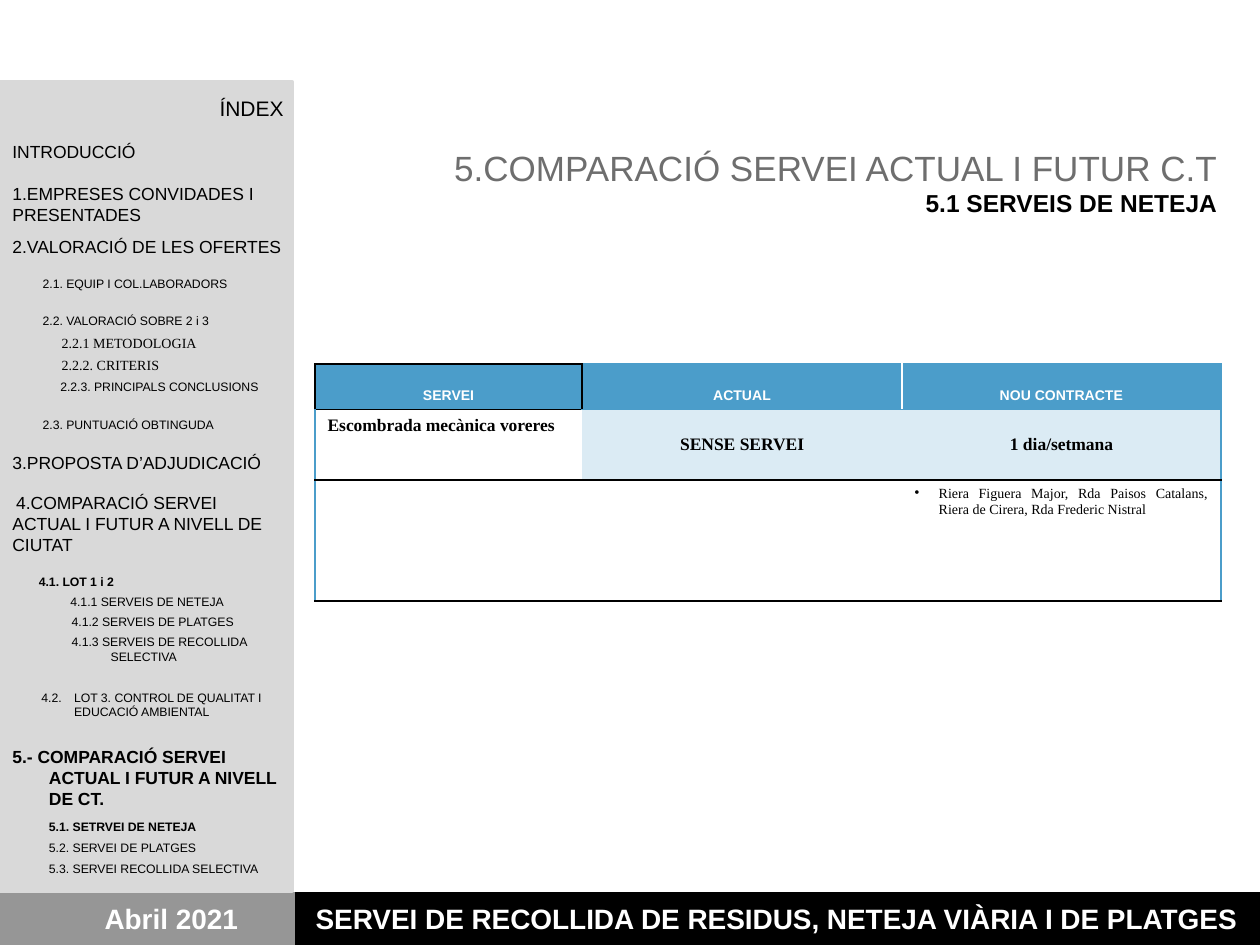
from typing import NamedTuple, Optional

from lxml.etree import SubElement
from pptx import Presentation
from pptx.dml.color import RGBColor
from pptx.enum.shapes import MSO_SHAPE
from pptx.enum.text import MSO_ANCHOR, PP_ALIGN
from pptx.oxml import parse_xml
from pptx.oxml.ns import nsdecls, qn
from pptx.util import Inches, Pt

ARIAL, TIMES = "Arial", "Times New Roman"
BLACK, WHITE, BLUE, PALE_BLUE = "000000", "FFFFFF", "4B9DCA", "DBEBF4"
SIDEBAR_GREY, FOOTER_GREY, TITLE_GREY = "D9D9D9", "969696", "6E6E6E"


class Entry(NamedTuple):
    """Index line: left and hang in inches, before and size in points."""
    text: str
    before: float
    size: float = 7
    left: float = 0
    hang: float = 0
    bold: bool = False
    font: str = ARIAL
    align: PP_ALIGN = PP_ALIGN.LEFT


class Cell(NamedTuple):
    """Table cell: edges maps L, R, T and B to a border colour."""
    edges: dict
    text: str = ""
    fill: Optional[str] = None
    font: str = TIMES
    size: float = 10
    color: str = BLACK
    bold: bool = True
    align: PP_ALIGN = PP_ALIGN.CENTER
    anchor: MSO_ANCHOR = MSO_ANCHOR.MIDDLE
    bullet: bool = False


INDEX = [
    Entry("ÍNDEX", 0, 12, align=PP_ALIGN.RIGHT),
    Entry("INTRODUCCIÓ", 11.4, 10),
    Entry("1.EMPRESES CONVIDADES I PRESENTADES", 12.3, 10),
    Entry("2.VALORACIÓ DE LES OFERTES", 6, 10),
    Entry("2.1. EQUIP I COL.LABORADORS", 11, left=0.24),
    Entry("2.2. VALORACIÓ SOBRE 2 i 3", 13, left=0.24),
    Entry("2.2.1 METODOLOGIA", 3.4, 8, left=0.39, font=TIMES),
    Entry("2.2.2. CRITERIS", 3.4, 8, left=0.39, font=TIMES),
    Entry("2.2.3. PRINCIPALS CONCLUSIONS", 3.2, left=0.38),
    Entry("2.3. PUNTUACIÓ OBTINGUDA", 13, left=0.24),
    Entry("3.PROPOSTA D’ADJUDICACIÓ", 12, 10),
    Entry("4.COMPARACIÓ SERVEI ACTUAL I FUTUR A NIVELL DE CIUTAT", 10.3, 10, hang=-0.03),
    Entry("4.1. LOT 1 i 2", 11, left=0.21, bold=True),
    Entry("4.1.1 SERVEIS DE NETEJA", 3.2, left=0.46),
    Entry("4.1.2 SERVEIS DE PLATGES", 3.2, left=0.47),
    Entry("4.1.3 SERVEIS DE RECOLLIDA SELECTIVA", 3, left=0.78, hang=0.31),
    Entry("4.2.\tLOT 3. CONTROL DE QUALITAT I EDUCACIÓ AMBIENTAL", 15, left=0.49, hang=0.26),
    Entry("5.- COMPARACIÓ SERVEI ACTUAL I FUTUR A NIVELL DE CT.", 15, 10,
          left=0.29, hang=0.29, bold=True),
    Entry("5.1. SETRVEI DE NETEJA", 6.2, left=0.29, bold=True),
    Entry("5.2. SERVEI DE PLATGES", 3.6, left=0.29),
    Entry("5.3. SERVEI RECOLLIDA SELECTIVA", 3.6, left=0.29),
]

HEADER = dict(fill=BLUE, font=ARIAL, size=8, color=WHITE, anchor=MSO_ANCHOR.BOTTOM)
RULED = {"T": BLACK, "B": BLACK}
ROWS = [
    [
        Cell(dict.fromkeys("LRTB", BLACK), "SERVEI", **HEADER),
        Cell({"L": BLACK, "R": WHITE, "T": BLUE, "B": BLUE}, "ACTUAL", **HEADER),
        Cell({"L": WHITE, "R": BLUE, "T": BLUE, "B": BLUE}, "NOU CONTRACTE", **HEADER),
    ],
    [
        Cell({"L": BLUE, **RULED}, "Escombrada mecànica voreres",
             align=PP_ALIGN.LEFT, anchor=MSO_ANCHOR.TOP),
        Cell({"T": BLUE, "B": BLACK}, "SENSE SERVEI", PALE_BLUE),
        Cell({"T": BLUE, "R": BLUE, "B": BLACK}, "1 dia/setmana", PALE_BLUE),
    ],
    [
        Cell({"L": BLUE, **RULED}),
        Cell(RULED),
        Cell({"R": BLUE, **RULED},
             "Riera Figuera Major, Rda Paisos Catalans, Riera de Cirera, Rda Frederic Nistral",
             size=8, bold=False, align=PP_ALIGN.JUSTIFY, anchor=MSO_ANCHOR.TOP, bullet=True),
    ],
]


def rgb(value: str) -> RGBColor:
    return RGBColor.from_string(value)


def write(frame, text: str, *, size: float, font: str = ARIAL, color: str = BLACK,
          bold: bool = False, align=PP_ALIGN.LEFT, before: float = 0,
          left: float = 0, hang: float = 0, bullet: bool = False) -> None:
    """Fill the empty first paragraph of a frame, or add one after it."""
    para = frame.paragraphs[-1]
    if para.runs:
        para = frame.add_paragraph()
    properties = para._p.get_or_add_pPr()
    properties.set("marL", str(Inches(left)))
    properties.set("indent", str(-Inches(hang)))
    if bullet:
        SubElement(properties, qn("a:buChar")).set("char", "•")
    para.alignment = align
    para.space_before = Pt(before)
    span = para.add_run()
    span.text = text
    span.font.name, span.font.size, span.font.bold = font, Pt(size), bold
    span.font.color.rgb = rgb(color)


def add_bar(page, left: float, top: float, width: float, height: float,
            fill: str, line: Optional[str] = None):
    bar = page.shapes.add_shape(MSO_SHAPE.RECTANGLE, Inches(left), Inches(top),
                                Inches(width), Inches(height))
    bar.shadow.inherit = False
    bar.fill.solid()
    bar.fill.fore_color.rgb = rgb(fill)
    if line:
        bar.line.color.rgb = rgb(line)
        bar.line.width = Pt(2)
    else:
        bar.line.fill.background()
    bar.text_frame.vertical_anchor = MSO_ANCHOR.MIDDLE
    return bar


def add_text_box(page, left: float, top: float, width: float, height: float):
    box = page.shapes.add_textbox(Inches(left), Inches(top), Inches(width), Inches(height))
    box.text_frame.word_wrap = True
    return box.text_frame


def draw_borders(cell, edges: dict) -> None:
    properties = cell._tc.get_or_add_tcPr()
    for position, side in enumerate("LRTB"):
        paint = "<a:noFill/>"
        if side in edges:
            paint = f'<a:solidFill><a:srgbClr val="{edges[side]}"/></a:solidFill>'
        border = parse_xml(f'<a:ln{side} {nsdecls("a")} w="12700">{paint}</a:ln{side}>')
        properties.insert(position, border)


def draw_cell(cell, content: Cell) -> None:
    cell.vertical_anchor = content.anchor
    if content.fill:
        cell.fill.solid()
        cell.fill.fore_color.rgb = rgb(content.fill)
    else:
        cell.fill.background()
    draw_borders(cell, content.edges)
    if content.text:
        indent = 0.19 if content.bullet else 0
        write(cell.text_frame, content.text, size=content.size, font=content.font,
              color=content.color, bold=content.bold, align=content.align,
              left=indent, hang=indent, bullet=content.bullet)


def main() -> None:
    deck = Presentation()
    deck.slide_width, deck.slide_height = Inches(10), Inches(7.5)
    page = deck.slides.add_slide(deck.slide_layouts[6])

    # Footer and sidebar
    footer = dict(size=16, color=WHITE, bold=True, align=PP_ALIGN.CENTER)
    subject = add_bar(page, 2.33, 7.08, 7.67, 0.42, BLACK)
    write(subject.text_frame, "SERVEI DE RECOLLIDA DE RESIDUS, NETEJA VIÀRIA I DE PLATGES", **footer)
    date = add_bar(page, 0, 7.08, 2.34, 0.42, FOOTER_GREY)
    write(date.text_frame, "Abril 2021", left=0.38, **footer)
    add_bar(page, -0.02, 0.65, 2.34, 6.42, SIDEBAR_GREY, SIDEBAR_GREY)

    # Title
    title = add_text_box(page, 2.89, 1.11, 6.87, 0.9)
    write(title, "5.COMPARACIÓ SERVEI ACTUAL I FUTUR C.T", size=20, color=TITLE_GREY,
          align=PP_ALIGN.RIGHT)
    write(title, "5.1 SERVEIS DE NETEJA", size=14, bold=True, align=PP_ALIGN.RIGHT)

    # Service comparison table
    widths, heights = (2.12, 2.54, 2.53), (0.36, 0.56, 0.96)
    table = page.shapes.add_table(3, 3, Inches(2.5), Inches(2.89),
                                  Inches(sum(widths)), Inches(sum(heights))).table
    for column, width in zip(table.columns, widths):
        column.width = Inches(width)
    for row, height, contents in zip(table.rows, heights, ROWS):
        row.height = Inches(height)
        for cell, content in zip(row.cells, contents):
            draw_cell(cell, content)

    # Index
    index = add_text_box(page, 0, 0.71, 2.35, 6.3)
    for entry in INDEX:
        write(index, **entry._asdict())

    deck.save("out.pptx")


if __name__ == "__main__":
    main()
